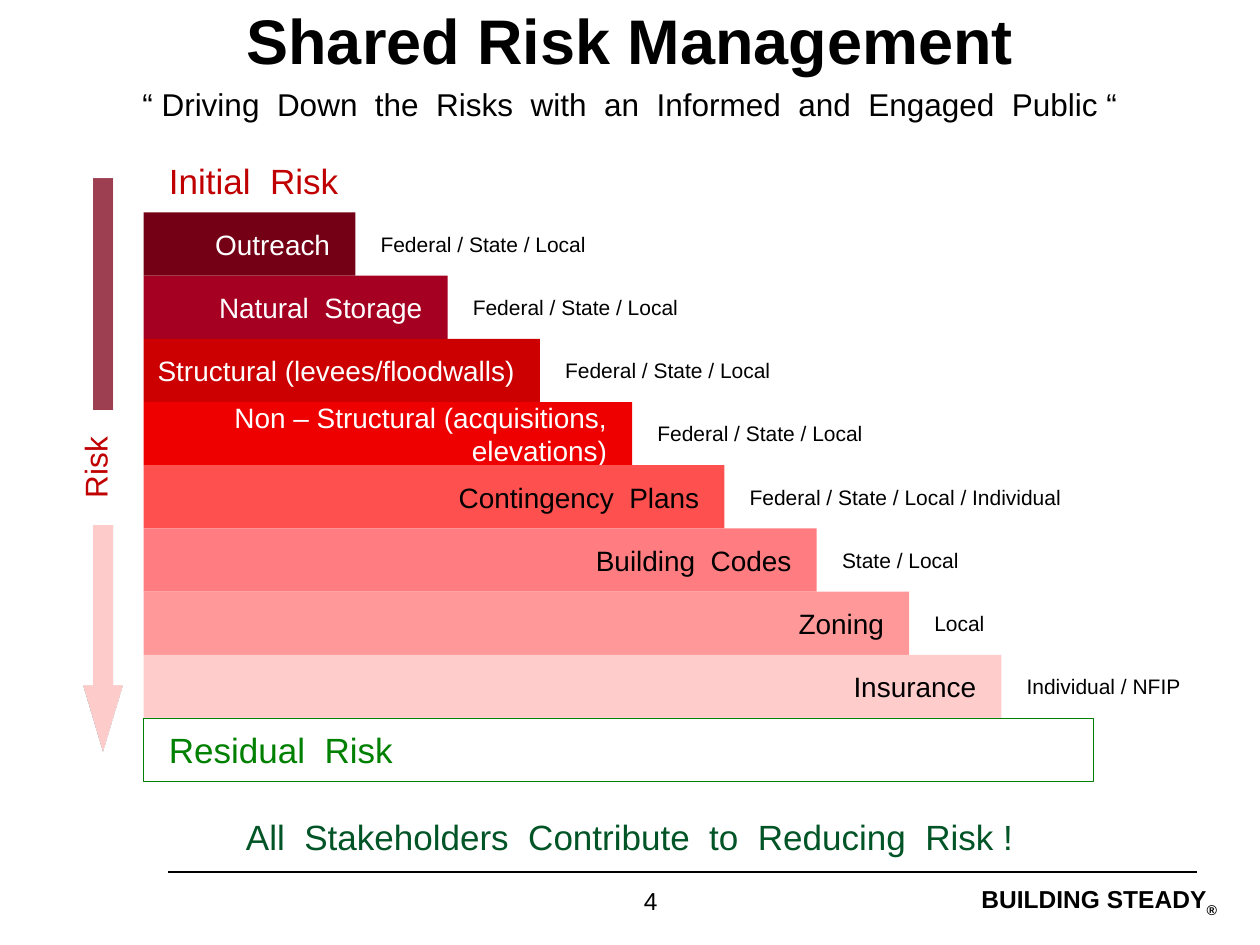
from dataclasses import dataclass
from lxml.etree import SubElement as Sub
from pptx import Presentation
from pptx.dml.color import RGBColor as Rgb
from pptx.enum.shapes import MSO_CONNECTOR as Conn, MSO_SHAPE as Kind
from pptx.enum.text import MSO_ANCHOR as Anchor, PP_ALIGN as Align
from pptx.oxml.ns import qn
from pptx.util import Inches, Pt

COLS, ROWS = 100, 75  # slide grid, square cells
CELL = Inches(10) // COLS


@dataclass(frozen=True)
class Theme:
    font: str = "Arial"
    black: str = "000000"
    white: str = "FFFFFF"
    red: str = "C00000"
    green: str = "008000"
    pine: str = "005426"
    dark: str = "7E0018"
    pale: str = "FFCCCC"
    title: int = 36
    head: int = 20
    sub: int = 18
    bar: int = 16
    foot: int = 14
    note: int = 12


T = Theme()

# Bar name, fill, text colour, who acts, note width in columns
STEPS = [
    ("Outreach", "740016", T.white, "Federal / State / Local", 21.8),
    ("Natural  Storage", "A50021", T.white, "Federal / State / Local", 21.8),
    ("Structural (levees/floodwalls)", "CC0000", T.white, "Federal / State / Local", 21.8),
    ("Non – Structural (acquisitions, elevations)", "EE0000", T.white,
     "Federal / State / Local", 21.8),
    ("Contingency  Plans", "FF5050", T.black, "Federal / State / Local / Individual", 32.3),
    ("Building  Codes", "FF7C80", T.black, "State / Local", 13.5),
    ("Zoning", "FF9999", T.black, "Local", 7.2),
    ("Insurance", T.pale, T.black, "Individual / NFIP", 17.1),
]


def emu(*cells):
    return [round(c * CELL) for c in cells]


def shape(slide, kind, box, fill=None, line=None):
    item = slide.shapes.add_shape(kind, *emu(*box))
    item.shadow.inherit = False
    if fill:
        item.fill.solid()
        item.fill.fore_color.rgb = Rgb.from_string(fill)
    if line:
        item.line.color.rgb = Rgb.from_string(line)
        item.line.width = Pt(0.25)
    else:
        item.line.fill.background()
    return item


def write(item, text, size, color=T.black, align=Align.LEFT, mid=False,
          pad=(1, 0.5, 1, 0.5), hang=False, bold=False):
    frame = item.text_frame
    frame.word_wrap = True
    frame.vertical_anchor = Anchor.MIDDLE if mid else Anchor.TOP
    (frame.margin_left, frame.margin_top,
     frame.margin_right, frame.margin_bottom) = emu(*pad)
    para = frame.paragraphs[0]
    para.alignment = align
    if hang:
        props = para._p.get_or_add_pPr()
        step = emu(2.5)[0]
        props.set("marL", str(step))
        props.set("indent", str(-step))
    return add_run(para, text, size, color, bold)


def add_run(para, text, size, color, bold):
    run = para.add_run()
    run.text = text
    run.font.name, run.font.size, run.font.bold = T.font, Pt(size), bold
    run.font.color.rgb = Rgb.from_string(color)
    return para


def label(slide, box, *args, **opts):
    return write(slide.shapes.add_textbox(*emu(*box)), *args, **opts)


def header(slide, box):
    x, y, w, h = box
    label(slide, (x + 5, y, w - 10, 0.6 * h), "Shared Risk Management", T.title,
          align=Align.CENTER, mid=True, bold=True)
    label(slide, (x, y + 0.61 * h, w, 0.39 * h),
          "“ Driving  Down  the  Risks  with  an  Informed  and  Engaged  Public “",
          T.sub, align=Align.CENTER)


def arrow(slide, box):
    x, y, w, h = box
    # Two-tone arrow with a hard colour change halfway
    item = shape(slide, Kind.DOWN_ARROW, box)
    item.adjustments[0], item.adjustments[1] = 0.5, 1.705
    item.fill.gradient()
    item.fill.gradient_angle = 270
    for stop, color in zip(item.fill.gradient_stops, (T.dark, T.pale)):
        stop.position = 0.5
        stop.color.rgb = Rgb.from_string(color)
    tone = item._element.spPr.find(".//" + qn("a:srgbClr"))
    Sub(tone, qn("a:alpha"), val="75000")
    # Turned caption over the middle
    wide, high = 9.1, 4
    tag = shape(slide, Kind.RECTANGLE,
                (x + w / 2 - wide / 2 - 0.1, y + h / 2 - high / 2 + 0.2, wide, high), T.white)
    tag.rotation = 270
    write(tag, "Risk", T.sub, T.red, Align.CENTER, pad=(1, 0, 1, 0))


def stairs(slide, box):
    x, y, w, h = box
    row = h / (len(STEPS) + 2)
    first = 16.8
    grow = (w - first) / len(STEPS)
    # Top caption
    label(slide, (x, y, first + 4, row), "Initial  Risk", T.head, T.red, mid=True,
          pad=(2, 0, 0, 0), hang=True)
    # Bars, each one step longer, with the parties beside them
    for i, (name, fill, ink, who, wide) in enumerate(STEPS):
        top, size = y + (i + 1) * row, first + i * grow
        bar = shape(slide, Kind.RECTANGLE, (x, top, size, row), fill)
        write(bar, name, T.bar, ink, Align.RIGHT, mid=True, pad=(0, 0, 2, 0), hang=True)
        label(slide, (x + size, top + row / 2 - 1, wide, 2), who, T.note, mid=True,
              pad=(2, 0, 0, 0), hang=True)
    # What is left
    rest = shape(slide, Kind.RECTANGLE, (x, y + h - row, w, row), T.white, T.green)
    write(rest, "Residual  Risk", T.head, T.green, mid=True, pad=(2, 0, 2, 0))


def footer(slide, box):
    x, y, w, h = box
    label(slide, (x, y, w, 4.4), "All  Stakeholders  Contribute  to  Reducing  Risk !",
          T.head, T.pine, Align.CENTER)
    # Rule
    rule = slide.shapes.add_connector(Conn.STRAIGHT, *emu(x + 95, y + 5, x + 13.3, y + 5))
    rule.line.color.rgb = Rgb.from_string(T.black)
    rule.line.width = Pt(0.75)
    Sub(rule._element.spPr, qn("a:effectLst"))
    # Page number and motto
    label(slide, (x + 40, y + h - 5.2, 23.3, 5.2), "4", T.foot, align=Align.CENTER)
    para = label(slide, (x + 68.1, y + 6, 28.5, 2.3), "BUILDING STEADY", T.foot,
                 align=Align.RIGHT, pad=(0, 0, 0, 0), bold=True)
    add_run(para, "®", T.foot, T.black, True)
    para.runs[-1].font._element.set("baseline", "-25000")


def main():
    deck = Presentation()
    deck.slide_width, deck.slide_height = emu(COLS, ROWS)
    slide = deck.slides.add_slide(deck.slide_layouts[6])
    header(slide, (0, 0, COLS, 10.3))
    arrow(slide, (6.6, 14.2, 3.1, 45.4))
    stairs(slide, (11.4, 11.85, 75.4, 50.15))
    footer(slide, (0, 64.2, COLS, 10.8))
    deck.save("out.pptx")


if __name__ == "__main__":
    main()
